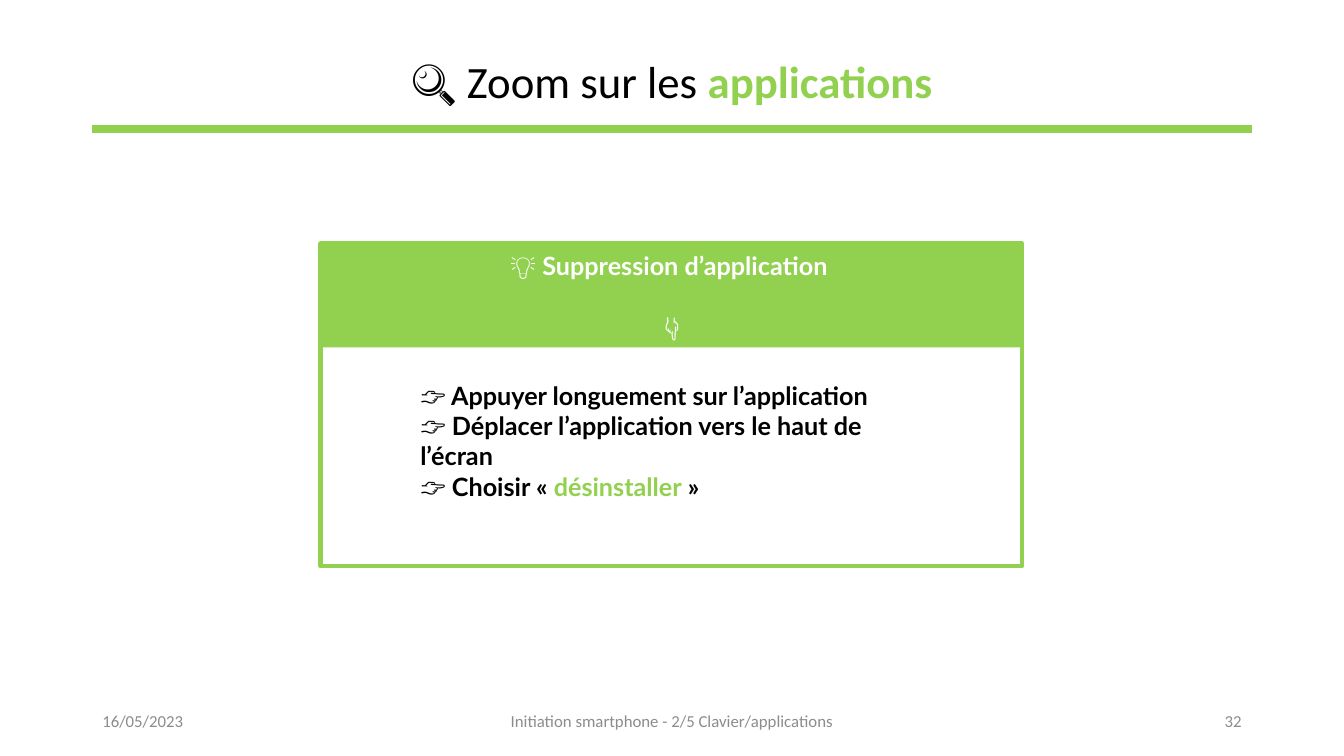
from lxml.etree import SubElement
from pptx import Presentation
from pptx.dml.color import RGBColor
from pptx.enum.shapes import MSO_CONNECTOR as Connector, MSO_SHAPE as Shape
from pptx.enum.text import MSO_ANCHOR as Anchor, MSO_AUTO_SIZE as AutoSize, PP_ALIGN as Align
from pptx.oxml.ns import qn
from pptx.util import Pt

GREEN, BLACK, WHITE, GREY = "92D050", "000000", "FFFFFF", "8C8C8C"


def color(hex_value):
    return RGBColor.from_string(hex_value)


class SlideBuilder:
    """Holds the lesson style and the current slide, and adds its elements."""

    def __init__(self, slide, accent=GREEN, title_font="Calibri", body_font="Lato"):
        self.slide = slide
        self.accent = accent
        self.title_font = title_font
        self.body_font = body_font

    def place(self, shape, left, top, width, height):
        shape.left, shape.top = Pt(left), Pt(top)
        shape.width, shape.height = Pt(width), Pt(height)

    def add_runs(self, paragraph, runs, font, size, align):
        paragraph.alignment = align
        for text, hex_value, bold in runs:
            run = paragraph.add_run()
            run.text = text
            run.font.name = font
            run.font.size = Pt(size)
            run.font.bold = bold
            run.font.color.rgb = color(hex_value)

    def paragraphs(self, frame, lines, align):
        for index, runs in enumerate(lines):
            paragraph = frame.add_paragraph() if index else frame.paragraphs[0]
            paragraph.space_before = Pt(0)
            self.add_runs(paragraph, runs, self.body_font, 18, align)

    def title(self, runs, *box):
        title = self.slide.shapes.title
        self.place(title, *box)
        title.text_frame.auto_size = AutoSize.NONE
        title.text_frame.vertical_anchor = Anchor.MIDDLE
        paragraph = title.text_frame.paragraphs[0]
        paragraph.line_spacing = 0.9
        self.add_runs(paragraph, runs, self.title_font, 32, Align.CENTER)

    def rule(self, left, right, top):
        line = self.slide.shapes.add_connector(
            Connector.STRAIGHT, Pt(left), Pt(top), Pt(right), Pt(top))
        line.line.color.rgb = color(self.accent)
        line.line.width = Pt(6)
        SubElement(line._element.spPr, qn("a:effectLst"))

    def rectangle(self, *box):
        shape = self.slide.shapes.add_shape(Shape.RECTANGLE, *map(Pt, box))
        shape.shadow.inherit = False
        return shape

    def header(self, lines, gap, *box):
        shape = self.rectangle(*box)
        shape.fill.solid()
        shape.fill.fore_color.rgb = color(self.accent)
        shape.line.fill.background()
        frame = shape.text_frame
        frame.word_wrap = True
        frame.auto_size = AutoSize.SHAPE_TO_FIT_TEXT
        frame.vertical_anchor = Anchor.TOP
        self.paragraphs(frame, lines, Align.CENTER)
        frame.paragraphs[-1].space_before = Pt(gap)

    def steps(self, lines, *box):
        body = self.slide.placeholders[1]
        self.place(body, *box)
        frame = body.text_frame
        frame.auto_size = AutoSize.SHAPE_TO_FIT_TEXT
        frame.vertical_anchor = Anchor.TOP
        self.paragraphs(frame, lines, Align.LEFT)
        for paragraph in frame.paragraphs:
            properties = paragraph._p.get_or_add_pPr()
            properties.set("marL", "0")
            properties.set("indent", "0")
            SubElement(properties, qn("a:buNone"))

    def frame(self, *box):
        shape = self.rectangle(*box)
        shape.fill.background()
        shape.line.color.rgb = color(self.accent)
        shape.line.width = Pt(3)

    def footer(self, text, align, left, width):
        box = self.slide.shapes.add_textbox(Pt(left), Pt(500.4), Pt(width), Pt(28.8))
        box.text_frame.word_wrap = True
        box.text_frame.vertical_anchor = Anchor.MIDDLE
        self.add_runs(box.text_frame.paragraphs[0], [(text, GREY, False)],
                      self.title_font, 12, align)


def main():
    presentation = Presentation()
    presentation.slide_width, presentation.slide_height = Pt(960), Pt(540)
    builder = SlideBuilder(presentation.slides.add_slide(presentation.slide_layouts[1]))

    builder.title([("🔍 Zoom sur les ", BLACK, False), ("applications", GREEN, True)],
                  66, 8, 828, 104.4)
    builder.rule(66, 894, 92)
    builder.header([[("💡 Suppression d’application ", WHITE, True)],
                    [("👇", WHITE, True)]],
                   21.6, 229.5, 175.5, 501, 72.7)
    builder.steps([[("👉 Appuyer longuement sur l’application", BLACK, True)],
                   [("👉 Déplacer l’application vers le haut de l’écran", BLACK, True)],
                   [("👉 Choisir « ", BLACK, True), ("désinstaller", GREEN, True),
                    (" »", BLACK, True)]],
                  293, 268, 373, 72.7)
    builder.frame(229, 174, 501, 230.5)
    builder.footer("16/05/2023", Align.LEFT, 66, 216)
    builder.footer("Initiation smartphone - 2/5 Clavier/applications", Align.CENTER, 318, 324)
    builder.footer("32", Align.RIGHT, 678, 216)

    presentation.save("out.pptx")


if __name__ == "__main__":
    main()
